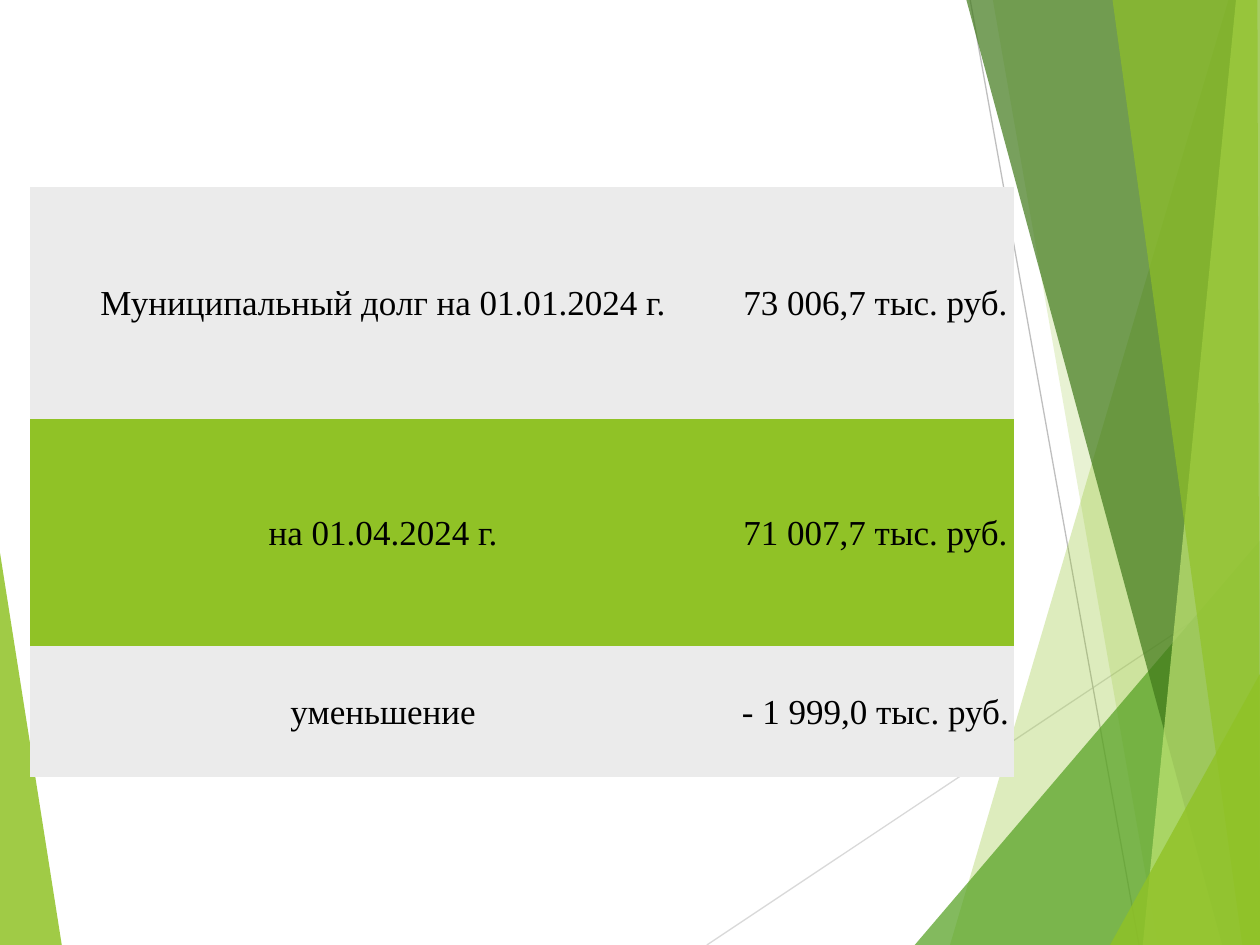
import pptx
import pptx.util
import pptx.dml.color
import pptx.enum.shapes
import pptx.enum.text
import pptx.oxml
import pptx.oxml.ns

HUES = {
    "lime": "90C226", "leaf": "54A021", "moss": "3F7819", "pale": "C0E474",
    "gray": "EBEBEB", "mist": "D9D9D9", "ash": "BFBFBF", "ink": "000000",
}
FONT = "Times New Roman"
PLAIN = "{2D5ABB26-0587-4C30-8999-92F81FD0307C}"  # table style without grid

# Lines and facets: points in percent of the box
LINES = [
    ("mist", (56.1, 100), (100, 61)),
    ("ash", (77, 0), (90.4, 100)),
]
# Facets: colour, opacity in percent, corners
LEFT = ("lime", 85, [(0, 58.5), (4.9, 100), (0, 100)])
RIGHT = [
    ("lime", 30, [(97.5, 0), (75.4, 100), (100, 100), (100, 0)]),
    ("lime", 20, [(78.8, 0), (91.9, 100), (100, 100), (100, 0)]),
    ("leaf", 72, [(72.6, 100), (100, 57.2), (100, 100)]),
    ("moss", 70, [(76.7, 0), (97, 100), (100, 100), (100, 0)]),
    ("pale", 70, [(98.1, 0), (90.7, 100), (100, 100), (100, 0)]),
    ("lime", 65, [(88.3, 0), (98.6, 100), (100, 100), (99.8, 0)]),
    ("lime", 80, [(88.1, 100), (100, 71.3), (100, 100)]),
]

# Debt table: label, amount, fill, share of the height
ROWS = [
    ("Муниципальный долг на 01.01.2024 г.", "73 006,7 тыс. руб.", "gray", 39.4),
    ("на 01.04.2024 г.", "71 007,7 тыс. руб.", "lime", 38.4),
    ("уменьшение", "- 1 999,0 тыс. руб.", "gray", 22.2),
]
COLS = [71.8, 28.2]


def hue(name):
    return pptx.dml.color.RGBColor.from_string(HUES[name])


def spot(box, point):
    left, top, wide, high = box
    return round(left + wide * point[0] / 100), round(top + high * point[1] / 100)


def draw_line(slide, box, name, start, end):
    line = slide.shapes.add_connector(
        pptx.enum.shapes.MSO_CONNECTOR.STRAIGHT, *spot(box, start), *spot(box, end))
    line.line.color.rgb = hue(name)
    line.line.width = pptx.util.Pt(0.75)
    props = line.element.xpath("./p:spPr")[0]
    props.append(pptx.oxml.parse_xml(
        "<a:effectLst %s/>" % pptx.oxml.ns.nsdecls("a")))


def draw_facet(slide, box, name, alpha, points):
    first, *rest = [spot(box, point) for point in points]
    path = slide.shapes.build_freeform(*first)
    path.add_line_segments(rest, close=True)
    facet = path.convert_to_shape()
    facet.shadow.inherit = False
    facet.line.fill.background()
    facet.fill.solid()
    facet.fill.fore_color.rgb = hue(name)
    color = facet.element.xpath("./p:spPr/a:solidFill/a:srgbClr")[0]
    color.append(pptx.oxml.parse_xml(
        '<a:alpha %s val="%d"/>' % (pptx.oxml.ns.nsdecls("a"), alpha * 1000)))


def draw_decor(slide, box):
    draw_facet(slide, box, *LEFT)
    for line in LINES:
        draw_line(slide, box, *line)
    for facet in RIGHT:
        draw_facet(slide, box, *facet)


def fill_cell(cell, text, name):
    cell.fill.solid()
    cell.fill.fore_color.rgb = hue(name)
    cell.vertical_anchor = pptx.enum.text.MSO_ANCHOR.MIDDLE
    cell.margin_left = cell.margin_right = cell.margin_top = pptx.util.Inches(0.01)
    cell.margin_bottom = 0
    para = cell.text_frame.paragraphs[0]
    para.text = text
    para.alignment = pptx.enum.text.PP_ALIGN.CENTER
    font = para.runs[0].font
    font.name, font.size = FONT, pptx.util.Pt(20)
    font.color.rgb = hue("ink")


def draw_table(slide, box):
    frame = slide.shapes.add_table(len(ROWS), len(COLS), *box)
    frame.element.xpath(".//a:tableStyleId")[0].text = PLAIN
    table = frame.table
    for col, share in zip(table.columns, COLS):
        col.width = round(box[2] * share / 100)
    for row, (label, amount, name, share) in zip(table.rows, ROWS):
        row.height = round(box[3] * share / 100)
        for cell, text in zip(row.cells, (label, amount)):
            fill_cell(cell, text, name)


def main():
    deck = pptx.Presentation()
    deck.slide_width = pptx.util.Inches(10)
    deck.slide_height = pptx.util.Inches(7.5)
    slide = deck.slides.add_slide(deck.slide_layouts[6])
    page = (0, 0, deck.slide_width, deck.slide_height)

    # Background facets
    draw_decor(slide, page)

    # Debt table
    left, top = spot(page, (2.35, 19.75))
    wide, high = spot(page, (78.15, 62.5))
    draw_table(slide, (left, top, wide, high))

    deck.save("out.pptx")


if __name__ == "__main__":
    main()
